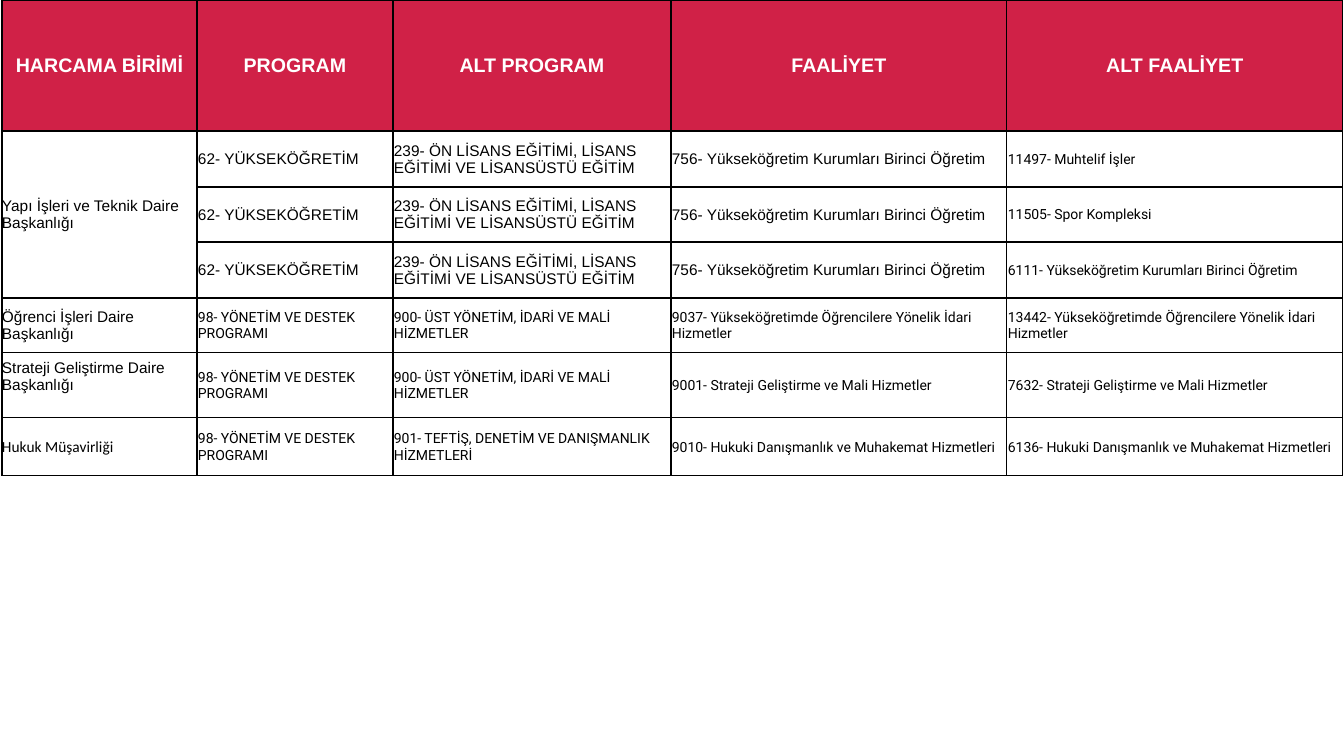
from pptx import Presentation, util as u
from pptx.dml.color import RGBColor
from pptx.enum import text
from pptx.oxml import ns
from lxml import etree

PX = 914400 / 100.8

COLUMNS = [195, 196, 278, 336, 336]
ROWS = [131, 56, 55, 56, 55, 65, 58]
HEADINGS = ["HARCAMA BİRİMİ", "PROGRAM", "ALT PROGRAM", "FAALİYET", "ALT FAALİYET"]

TEACHING = ["62- YÜKSEKÖĞRETİM",
            "239- ÖN LİSANS EĞİTİMİ, LİSANS EĞİTİMİ VE LİSANSÜSTÜ EĞİTİM",
            "756- Yükseköğretim Kurumları Birinci Öğretim"]
SUPPORT = "98- YÖNETİM VE DESTEK PROGRAMI"
MANAGEMENT = "900- ÜST YÖNETİM, İDARİ VE MALİ HİZMETLER"
STUDENT = "Yükseköğretimde Öğrencilere Yönelik İdari Hizmetler"
STRATEGY = "Strateji Geliştirme ve Mali Hizmetler"
LEGAL = "Hukuki Danışmanlık ve Muhakemat Hizmetleri"

BODY = [
    ["Yapı İşleri ve Teknik Daire Başkanlığı", *TEACHING, "11497- Muhtelif İşler"],
    ["", *TEACHING, "11505- Spor Kompleksi"],
    ["", *TEACHING, "6111- Yükseköğretim Kurumları Birinci Öğretim"],
    ["Öğrenci İşleri Daire Başkanlığı", SUPPORT, MANAGEMENT,
     f"9037- {STUDENT}", f"13442- {STUDENT}"],
    ["Strateji Geliştirme Daire Başkanlığı", SUPPORT, MANAGEMENT,
     f"9001- {STRATEGY}", f"7632- {STRATEGY}"],
    ["Hukuk Müşavirliği", SUPPORT, "901- TEFTİŞ, DENETİM VE DANIŞMANLIK HİZMETLERİ",
     f"9010- {LEGAL}", f"6136- {LEGAL}"],
]
STRATEGY_ROW, LEGAL_ROW = 5, 6


def px(length):
    return u.Emu(round(length * PX))


def colour(code):
    return RGBColor.from_string(code)


def add_borders(cell, code="000000", points=1):
    props = cell._tc.get_or_add_tcPr()
    for side in ("lnL", "lnR", "lnT", "lnB"):
        line = etree.SubElement(props, ns.qn(f"a:{side}"), w=str(u.Pt(points)))
        fill = etree.SubElement(line, ns.qn("a:solidFill"))
        etree.SubElement(fill, ns.qn("a:srgbClr"), val=code)


def set_margins(cell, left, top, right, bottom):
    cell.margin_left, cell.margin_top = px(left), px(top)
    cell.margin_right, cell.margin_bottom = px(right), px(bottom)


def write(cell, words, size, font, code="000000", bold=False, align=text.PP_ALIGN.LEFT):
    cell.vertical_anchor = text.MSO_ANCHOR.MIDDLE
    para = cell.text_frame.paragraphs[0]
    para.alignment = align
    if words:
        span = para.add_run()
        span.text = words
        span.font.size, span.font.name, span.font.bold = u.Pt(size), font, bold
        span.font.color.rgb = colour(code)


def add_heading(cell, words):
    add_borders(cell)
    cell.fill.solid()
    cell.fill.fore_color.rgb = colour("D02147")
    set_margins(cell, 0, 0, 0, 0)
    write(cell, words, 14, "Arial", "FFFFFF", True, text.PP_ALIGN.CENTER)


def body_font(row, column):
    """Size and font: unit names and teaching programs are larger than the rest."""
    if column == 0:
        return 11, "Calibri" if row == LEGAL_ROW else "Arial"
    return (11, "Arial") if row <= 3 and column < 4 else (10, "Roboto")


def add_entry(cell, words, row, column):
    add_borders(cell)
    cell.fill.background()
    if column:
        set_margins(cell, 1, 1, 1, 0)
    else:
        set_margins(cell, 0, 0, 0, 18 if row == STRATEGY_ROW else 0)
    write(cell, words, *body_font(row, column))


def add_program_table(page):
    frame = page.shapes.add_table(len(ROWS), len(COLUMNS), px(2), px(0),
                                  px(sum(COLUMNS)), px(sum(ROWS)))
    table = frame.table
    table.horz_banding = False
    for column, width in zip(table.columns, COLUMNS):
        column.width = px(width)
    for row, height in zip(table.rows, ROWS):
        row.height = px(height)
    for column, words in enumerate(HEADINGS):
        add_heading(table.cell(0, column), words)
    for row, entries in enumerate(BODY, 1):
        for column, words in enumerate(entries):
            add_entry(table.cell(row, column), words, row, column)
    table.cell(1, 0).merge(table.cell(3, 0))


def main():
    deck = Presentation()
    deck.slide_width, deck.slide_height = px(1344), px(756)
    page = deck.slides.add_slide(deck.slide_layouts[6])
    add_program_table(page)
    deck.save("out.pptx")


if __name__ == "__main__":
    main()
